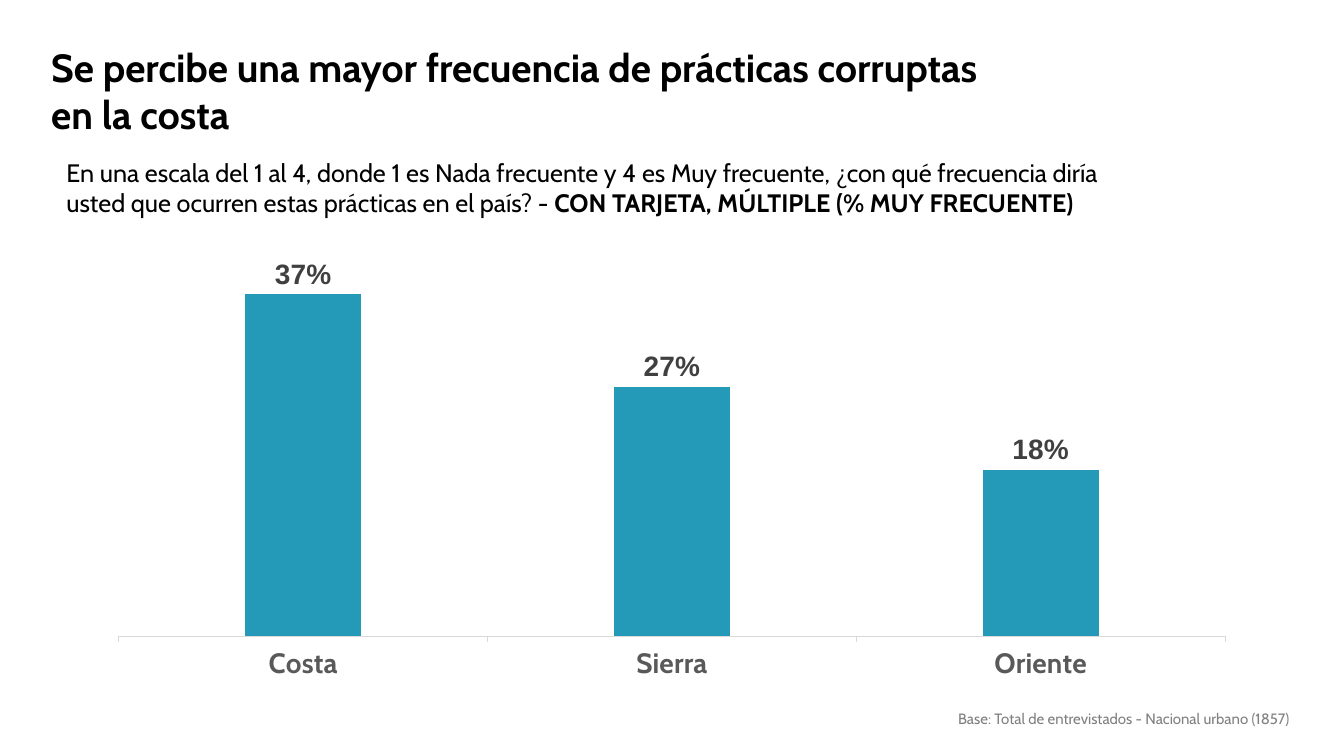
"""Build a slide charting how often corrupt practices are perceived by region."""
import pptx
import pptx.chart.data
import pptx.dml.color
import pptx.enum.chart
import pptx.enum.text
import pptx.util

Inches = pptx.util.Inches
Pt = pptx.util.Pt
Align = pptx.enum.text.PP_ALIGN
ChartEnum = pptx.enum.chart
COLORS = {"text": "000000", "base": "808080", "bar": "2599B8",
          "value": "404040", "region": "595959", "axis": "D9D9D9"}


def style_font(font, color, **values):
    font.color.rgb = pptx.dml.color.RGBColor.from_string(COLORS[color])
    for attribute, value in values.items():
        setattr(font, attribute, value)


deck = pptx.Presentation()
deck.slide_width, deck.slide_height = Inches(13.33), Inches(7.5)
slide = deck.slides.add_slide(deck.slide_layouts[6])

texts = [
    ((5.94, 7.01, 6.95, 0.26), 10.7, "base", Align.RIGHT, 0.9,
     [("Base: Total de entrevistados - Nacional urbano (1857)", False)]),
    ((0.41, 0.38, 9.45, 1), 28, "text", Align.LEFT, 1.0,
     [("Se percibe una mayor frecuencia de prácticas corruptas en la costa", True)]),
    ((0.56, 1.51, 10.78, 0.71), 18, "text", Align.LEFT, 1.0,
     [("En una escala del 1 al 4, donde 1 es Nada frecuente y 4 es Muy frecuente, "
       "¿con qué frecuencia diría usted que ocurren estas prácticas en el país? - ", False),
      ("CON TARJETA, MÚLTIPLE (% MUY FRECUENTE)", True)]),
]
for place, size, color, alignment, spacing, runs in texts:
    frame = slide.shapes.add_textbox(*map(Inches, place)).text_frame
    frame.word_wrap = True
    paragraph = frame.paragraphs[0]
    paragraph.alignment = alignment
    paragraph.line_spacing = spacing
    for wording, bold in runs:
        run = paragraph.add_run()
        run.text = wording
        style_font(run.font, color, name="Cabin", size=Pt(size), bold=bold)

frequency = pptx.chart.data.CategoryChartData(number_format="0%")
frequency.categories = ["Costa", "Sierra", "Oriente"]
frequency.add_series("Series 1", [0.37, 0.27, 0.18])
chart = slide.shapes.add_chart(
    ChartEnum.XL_CHART_TYPE.COLUMN_CLUSTERED,
    Inches(0.95), Inches(2.56), Inches(11.43), Inches(4.28), frequency).chart
chart.has_legend = False
chart.has_title = False
style_font(chart.font, "text", name="Arial", size=Pt(10))

percent_axis = chart.value_axis
percent_axis.visible = False
percent_axis.has_major_gridlines = False
percent_axis.minimum_scale = 0
percent_axis.maximum_scale = 0.4
percent_axis.tick_labels.number_format = "0%"
percent_axis.tick_labels.number_format_is_linked = False

region_axis = chart.category_axis
region_axis.major_tick_mark = ChartEnum.XL_TICK_MARK.OUTSIDE
region_axis.format.line.width = Pt(0.75)
region_axis.format.line.color.rgb = pptx.dml.color.RGBColor.from_string(COLORS["axis"])
style_font(region_axis.tick_labels.font, "region", name="Cabin", size=Pt(20), bold=True)

columns = chart.plots[0]
columns.gap_width = 219
columns.overlap = -27
columns.vary_by_categories = False
bars = columns.series[0]
bars.format.fill.solid()
bars.format.fill.fore_color.rgb = pptx.dml.color.RGBColor.from_string(COLORS["bar"])
percents = bars.data_labels
percents.show_value = True
percents.position = ChartEnum.XL_LABEL_POSITION.OUTSIDE_END
percents.number_format = "0%"
percents.number_format_is_linked = False
style_font(percents.font, "value", name="Arial", size=Pt(20), bold=True)

deck.save("out.pptx")
